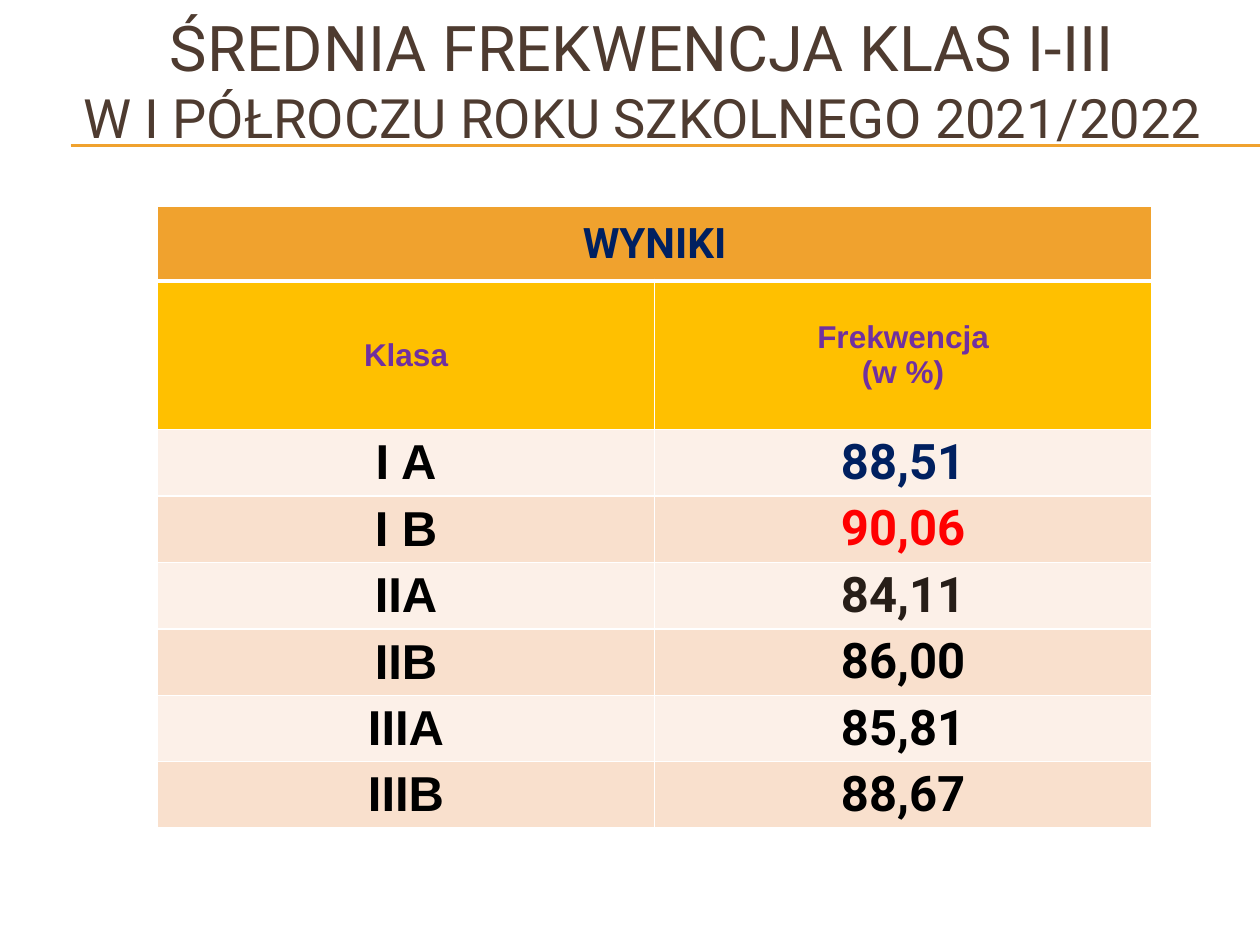
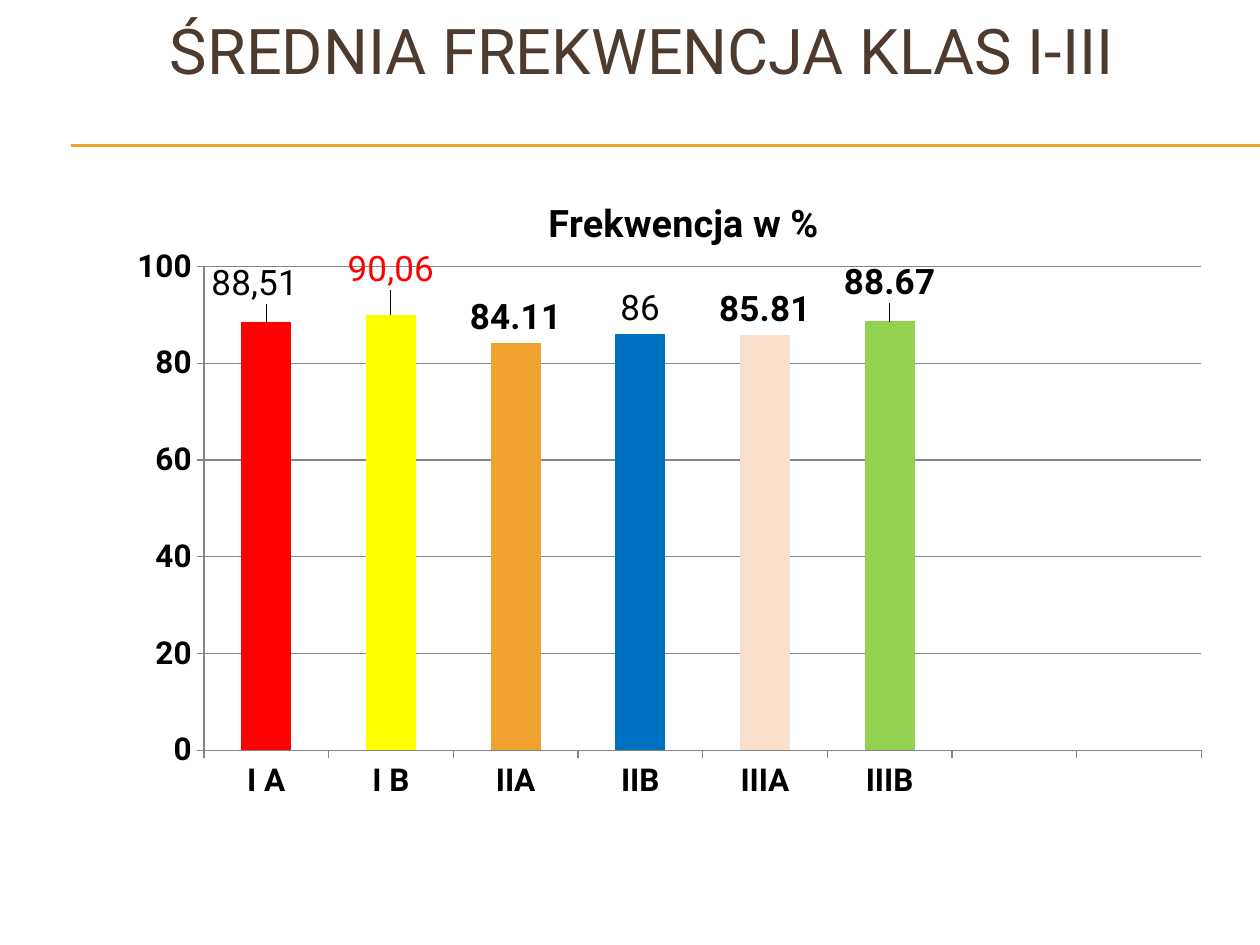
from lxml.etree import SubElement
from pptx import Presentation
from pptx.chart.data import CategoryChartData
from pptx.dml.color import RGBColor
from pptx.enum.chart import XL_CHART_TYPE, XL_LABEL_POSITION, XL_TICK_MARK
from pptx.enum.shapes import MSO_CONNECTOR
from pptx.enum.text import MSO_ANCHOR, PP_ALIGN
from pptx.oxml import parse_xml
from pptx.oxml.ns import nsdecls, qn
from pptx.util import Inches, Pt

ORANGE = RGBColor(0xF0, 0xA2, 0x2E)
BROWN = RGBColor(0x4E, 0x3B, 0x30)
DARK_BROWN = RGBColor(0x27, 0x1E, 0x18)
NAVY = RGBColor(0x00, 0x20, 0x60)
PURPLE = RGBColor(0x70, 0x30, 0xA0)
AMBER = RGBColor(0xFF, 0xC0, 0x00)
CREAM = RGBColor(0xFC, 0xF0, 0xE8)
PEACH = RGBColor(0xF9, 0xE0, 0xCD)
RED = RGBColor(0xFF, 0x00, 0x00)
YELLOW = RGBColor(0xFF, 0xFF, 0x00)
BLUE = RGBColor(0x00, 0x70, 0xC0)
GREEN = RGBColor(0x92, 0xD0, 0x50)
GREY = RGBColor(0x86, 0x86, 0x86)
BLACK = RGBColor(0x00, 0x00, 0x00)

HEADING = "ŚREDNIA FREKWENCJA KLAS I-III"
SUBHEADING = "W I PÓŁROCZU ROKU SZKOLNEGO 2021/2022"

# Class, attendance, colour in the table, colour of the column
ATTENDANCE = [
    ("I A", 88.51, NAVY, RED),
    ("I B", 90.06, RED, YELLOW),
    ("IIA", 84.11, DARK_BROWN, ORANGE),
    ("IIB", 86.00, BLACK, BLUE),
    ("IIIA", 85.81, BLACK, PEACH),
    ("IIIB", 88.67, BLACK, GREEN),
]
EMPTY_CATEGORIES = 2


def set_font(font, size, color, bold=False, name="Roboto"):
    font.name = name
    font.size = Pt(size)
    font.bold = bold
    font.color.rgb = color


def add_rules(slide):
    """Double rule under the title."""
    for y in (1.15, 1.16):
        rule = slide.shapes.add_connector(
            MSO_CONNECTOR.STRAIGHT, Inches(0.56), Inches(y), Inches(10), Inches(y))
        rule.line.color.rgb = ORANGE
        rule.line.width = Pt(0.75)
        SubElement(rule._element.spPr, qn("a:effectLst"))


def add_title(slide, height, subheading=None):
    frame = slide.shapes.add_textbox(
        Inches(0.5), 0, Inches(9.19), Inches(height)).text_frame
    frame.word_wrap = True
    frame.vertical_anchor = MSO_ANCHOR.MIDDLE
    paragraph = frame.paragraphs[0]
    paragraph.alignment = PP_ALIGN.CENTER
    set_font(paragraph.font, 36, BROWN)
    paragraph.add_run().text = HEADING
    if subheading:
        paragraph.add_line_break()
        second_line = paragraph.add_run()
        second_line.text = subheading
        second_line.font.size = Pt(31)


def style_borders(cell, bottom):
    """White borders, with the bottom one of the given width in points."""
    properties = cell._tc.get_or_add_tcPr()
    for position, (side, width) in enumerate(
            [("L", 1), ("R", 1), ("T", 1), ("B", bottom)]):
        properties.insert(position, parse_xml(
            f'<a:ln{side} {nsdecls("a")} w="{Pt(width)}"><a:solidFill>'
            f'<a:srgbClr val="FFFFFF"/></a:solidFill></a:ln{side}>'))


def fill_cell(cell, text, fill, size, color, font="Roboto", margin=0.03, bottom=1):
    cell.text = text
    cell.vertical_anchor = MSO_ANCHOR.MIDDLE
    cell.margin_left = cell.margin_right = Inches(margin)
    cell.margin_top = cell.margin_bottom = Inches(margin)
    paragraph = cell.text_frame.paragraphs[0]
    paragraph.alignment = PP_ALIGN.CENTER
    set_font(paragraph.font, size, color, True, font)
    cell.fill.solid()
    cell.fill.fore_color.rgb = fill
    style_borders(cell, bottom)


def add_results_table(slide, left, top, width):
    heights = [0.59, 1.18] + [0.51] * len(ATTENDANCE)
    table = slide.shapes.add_table(
        len(heights), 2, Inches(left), Inches(top),
        Inches(width), Inches(sum(heights))).table
    table.horz_banding = False
    for row, height in zip(table.rows, heights):
        row.height = Inches(height)

    # Headings
    table.cell(0, 0).merge(table.cell(0, 1))
    for column in range(2):
        fill_cell(table.cell(0, column), "" if column else "WYNIKI",
                  ORANGE, 24, NAVY, bottom=3)
    for column, text in enumerate(["Klasa", "Frekwencja\v(w %)"]):
        fill_cell(table.cell(1, column), text, AMBER, 18, PURPLE, "Arial")

    # One row for each class
    for index, (group, value, color, _) in enumerate(ATTENDANCE):
        fill = PEACH if index % 2 else CREAM
        fill_cell(table.cell(index + 2, 0), group, fill, 28, BLACK, "Arial")
        fill_cell(table.cell(index + 2, 1), f"{value:.2f}".replace(".", ","),
                  fill, 28, color, margin=0.01)


def set_layout(parent, position, **settings):
    """Give a chart part a manual layout."""
    for old in parent.findall(qn("c:layout")):
        parent.remove(old)
    layout = parse_xml(f'<c:layout {nsdecls("c")}><c:manualLayout/></c:layout>')
    for tag, value in settings.items():
        SubElement(layout[0], qn(f"c:{tag}")).set("val", str(value))
    parent.insert(position, layout)


def style_axis(axis):
    set_font(axis.tick_labels.font, 18, BLACK, True)
    axis.major_tick_mark = XL_TICK_MARK.OUTSIDE
    axis.format.line.color.rgb = GREY


def label_columns(series):
    labels = series.data_labels
    labels.show_value = True
    labels.position = XL_LABEL_POSITION.OUTSIDE_END
    set_font(labels.font, 20, BLACK, True)

    # Point, own text, colour, shift as a share of the chart
    for index, text, color, x, y in [
            (0, "88,51", BLACK, -0.01, -0.02),
            (1, "90,06", RED, 0, -0.03),
            (3, "86", BLACK, 0, 0),
            (5, None, BLACK, 0, -0.02)]:
        label = series.points[index].data_label
        if text:
            paragraph = label.text_frame.paragraphs[0]
            run = paragraph.add_run()
            run.text = text
            set_font(run.font, 20, color)
        else:
            set_font(label.font, 20, color, True)
        label.position = XL_LABEL_POSITION.OUTSIDE_END
        if x or y:
            set_layout(label._get_or_add_dLbl(), 1, x=x, y=y)


def add_attendance_chart(slide, left, top, width, height):
    data = CategoryChartData()
    data.categories = [row[0] for row in ATTENDANCE] + [""] * EMPTY_CATEGORIES
    data.add_series("Frekwencja w %",
                    [row[1] for row in ATTENDANCE] + [None] * EMPTY_CATEGORIES)
    chart = slide.shapes.add_chart(
        XL_CHART_TYPE.COLUMN_CLUSTERED, Inches(left), Inches(top),
        Inches(width), Inches(height), data).chart
    set_font(chart.font, 18, BLACK)
    chart.has_legend = False

    # Title and plot area
    chart.has_title = True
    heading = chart.chart_title.text_frame.paragraphs[0]
    run = heading.add_run()
    run.text = "Frekwencja w %"
    set_font(run.font, 21.6, BLACK, True)
    set_layout(chart.chart_title._element, 1,
               xMode="edge", yMode="edge", x=0.41, y=0.02)
    set_layout(chart._chartSpace.chart.plotArea, 0, layoutTarget="inner",
               xMode="edge", yMode="edge", x=0.117, y=0.137, w=0.866, h=0.744)

    # Axes
    style_axis(chart.category_axis)
    value_axis = chart.value_axis
    style_axis(value_axis)
    value_axis.minimum_scale = 0
    value_axis.maximum_scale = 100
    value_axis.major_unit = 20
    value_axis.tick_labels.number_format = "#,##0"
    value_axis.tick_labels.number_format_is_linked = False
    value_axis.major_gridlines.format.line.color.rgb = GREY

    # Columns
    plot = chart.plots[0]
    plot.gap_width = 150
    plot.vary_by_categories = False
    series = plot.series[0]
    for index, row in enumerate(ATTENDANCE):
        column_fill = series.points[index].format.fill
        column_fill.solid()
        column_fill.fore_color.rgb = row[3]
    label_columns(series)


def add_slide(presentation, title_height, subheading=None):
    slide = presentation.slides.add_slide(presentation.slide_layouts[6])
    add_rules(slide)
    add_title(slide, title_height, subheading)
    return slide


def main():
    presentation = Presentation()
    presentation.slide_width = Inches(10)
    presentation.slide_height = Inches(7.5)
    add_results_table(add_slide(presentation, 1.25, SUBHEADING), 1.25, 1.64, 7.89)
    add_attendance_chart(add_slide(presentation, 0.78), 0.55, 1.41, 9.14, 5.16)
    presentation.save("out.pptx")


if __name__ == "__main__":
    main()
